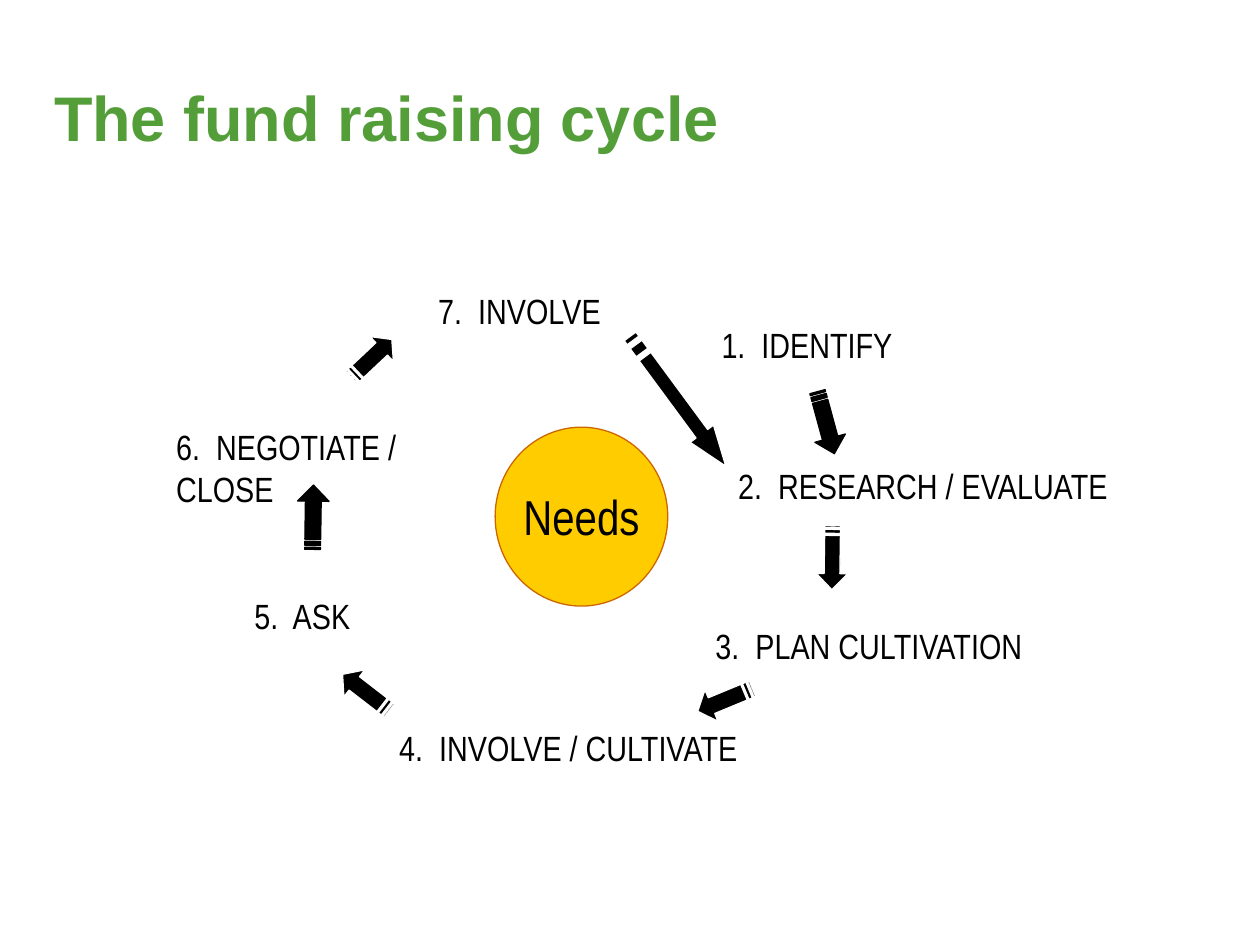
"""Build the fund raising cycle slide on a grid of 100 columns by 75 rows."""
from pptx import Presentation
from pptx.dml.color import RGBColor as Rgb
from pptx.enum.shapes import MSO_SHAPE as Preset
from pptx.enum.text import MSO_ANCHOR as Anchor, MSO_AUTO_SIZE as Fit, PP_ALIGN as Align
from pptx.util import Inches, Pt

THEME = {
    "title": {"name": "Arial", "size": Pt(36), "bold": True, "color": "549E39"},
    "needs": {"name": "Arial Narrow", "size": Pt(28), "color": "000000"},
    "step": {"name": "Arial Narrow", "size": Pt(20), "color": "000000"},
    "circle": ("FFCC00", "CC6600"),
    "solid arrow": ("000000", "000000"),
    "cut arrow": ("000000", "FFFFFF"),
    "line": Pt(0.75),
}
COLUMNS, ROWS = 100, 75
TITLE = ("The fund raising cycle", (4.3, 3, 91.3, 12.5))
NEEDS = ("Needs", (39.3, 33.9, 13.7, 14.2), (20.4, 5.7))
STEPS = [
    ("1.  IDENTIFY", (54.8, 25.2, 18.5, 4.4), True, Align.CENTER),
    ("2.  RESEARCH / EVALUATE", (57.6, 36.4, 31.6, 4.4), False, Align.LEFT),
    ("3.  PLAN CULTIVATION", (55.8, 49.1, 26.6, 4.4), False, Align.LEFT),
    ("4.  INVOLVE / CULTIVATE", (30.7, 57.2, 29.1, 4.4), False, Align.LEFT),
    ("5.  ASK", (19.2, 46.7, 11.1, 4.4), True, Align.LEFT),
    ("6.  NEGOTIATE / CLOSE", (13, 33.3, 25.3, 7.7), True, Align.LEFT),
    ("7.  INVOLVE", (33.8, 22.5, 15, 4.4), False, Align.LEFT),
]
ARROWS = [
    ((55.2, 54.2, 4.7, 2.7), 157.5, "cut arrow"),
    ((22.3, 39.8, 5.1, 2.5), 270.8, "solid arrow"),
    ((27.3, 27.1, 4.4, 2.7), 316.7, "cut arrow"),
    ((63.5, 43, 5.1, 2.5), 90.8, "cut arrow"),
    ((26.7, 53.6, 4.7, 2.7), 217.7, "cut arrow"),
    ((63, 32.3, 5.1, 2.5), 74.8, "solid arrow"),
    ((47.4, 30.7, 12.8, 2.3), 53.6, "cut arrow"),
]


def bar(start, end):
    return [(start, 1 / 4), (end, 1 / 4), (end, 3 / 4), (start, 3 / 4)]


HEAD = [(3 / 4, 0), (1, 1 / 2), (3 / 4, 1)]
SHAFT = bar(5 / 32, 3 / 4)
STRIPED_ARROW = [SHAFT[:2] + HEAD + SHAFT[2:], bar(1 / 16, 1 / 8), bar(0, 1 / 32)]

deck = Presentation()
deck.slide_width, deck.slide_height = Inches(10), Inches(7.5)
slide = deck.slides.add_slide(deck.slide_layouts[6])
shapes = slide.shapes


def place(cells):
    units = (deck.slide_width / COLUMNS, deck.slide_height / ROWS) * 2
    return [round(cell * unit) for cell, unit in zip(cells, units)]


def write(words, cells, role, align=Align.LEFT, **frame_format):
    frame = shapes.add_textbox(*place(cells)).text_frame
    for key, value in {"word_wrap": True, **frame_format}.items():
        setattr(frame, key, value)
    line = frame.paragraphs[0]
    line.alignment = align
    run = line.add_run()
    run.text = words
    for key, value in THEME[role].items():
        if key == "color":
            run.font.color.rgb = Rgb.from_string(value)
        else:
            setattr(run.font, key, value)


def paint(figure, role):
    fill, outline = THEME[role]
    figure.shadow.inherit = False
    figure.fill.solid()
    figure.fill.fore_color.rgb = Rgb.from_string(fill)
    figure.line.color.rgb = Rgb.from_string(outline)
    figure.line.width = THEME["line"]


def draw_arrow(cells, angle, role):
    left, top, width, height = place(cells)
    contours = [[(left + x * width, top + y * height) for x, y in part] for part in STRIPED_ARROW]
    builder = shapes.build_freeform(*contours[0][0])
    for contour in contours:
        if contour is not contours[0]:
            builder.move_to(*contour[0])
        builder.add_line_segments(contour[1:], close=True)
    arrow = builder.convert_to_shape()
    arrow.rotation = angle
    paint(arrow, role)


write(*TITLE, "title", vertical_anchor=Anchor.MIDDLE,
      margin_left=0, margin_top=0, margin_right=0, margin_bottom=0)

needs, circle, (label_width, label_height) = NEEDS
paint(shapes.add_shape(Preset.OVAL, *place(circle)), "circle")
label = (circle[0] + (circle[2] - label_width) / 2,
         circle[1] + (circle[3] - label_height) / 2, label_width, label_height)
write(needs, label, "needs", Align.CENTER, auto_size=Fit.SHAPE_TO_FIT_TEXT)

for step, cells, wrap, align in STEPS:
    write(step, cells, "step", align, word_wrap=wrap, auto_size=Fit.SHAPE_TO_FIT_TEXT)

for arrow_spec in ARROWS:
    draw_arrow(*arrow_spec)

deck.save("out.pptx")
